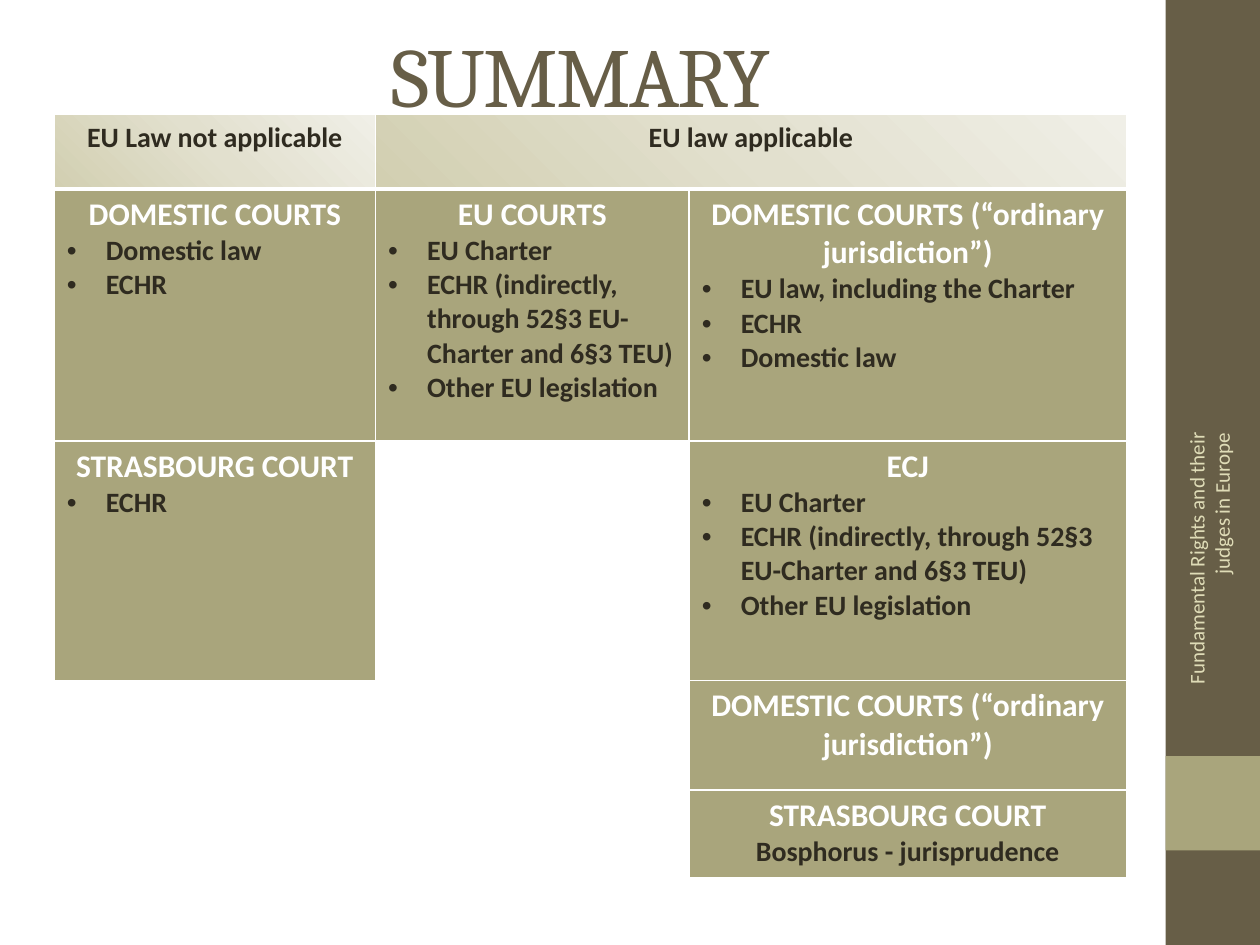
import pptx
import pptx.util
import pptx.oxml
import pptx.oxml.ns
import pptx.dml.color
import pptx.enum.shapes
import pptx.enum.text

Inches, Pt = pptx.util.Inches, pptx.util.Pt
ALIGN = pptx.enum.text.PP_ALIGN
MIDDLE = pptx.enum.text.MSO_ANCHOR.MIDDLE

# Content: each cell is (heading, centred notes, bullets)
TITLE = "SUMMARY"
SIDE = "Fundamental Rights and their judges in Europe"
HEADS = ["EU Law not applicable", "EU law applicable"]
EU_LAW = ["EU Charter",
          "ECHR (indirectly, through 52§3 EU-Charter and 6§3 TEU)",
          "Other EU legislation"]
ORDINARY = "DOMESTIC COURTS (“ordinary jurisdiction”)"
CELLS = {
    (1, 0): ("DOMESTIC COURTS", [], ["Domestic law", "ECHR"]),
    (1, 1): ("EU COURTS", [], EU_LAW),
    (1, 2): (ORDINARY, [],
             ["EU law, including the Charter", "ECHR", "Domestic law"]),
    (2, 0): ("STRASBOURG COURT", [], ["ECHR"]),
    (2, 2): ("ECJ", [], EU_LAW),
    (3, 2): (ORDINARY, [], []),
    (4, 2): ("STRASBOURG COURT", ["Bosphorus - jurisprudence"], []),
}
COLS = [2.55, 2.49, 3.47]
ROWS = [0.59, 2, 1.9, 0.87, 0.7]

THEME = {
    "brown": "675E47", "olive": "A9A57C", "ink": "2F2B20",
    "white": "FFFFFF", "side": "DFDCB7",
    "fade": [(0, "D2CFB1"), (50, "E2E0CE"), (100, "F0EFE7")],
    "body": "Calibri", "head": "Cambria",
    "title": 48, "court": 18, "item": 16, "small": 12,
}


def color(name):
    return pptx.dml.color.RGBColor.from_string(THEME[name])


def xml(text):
    # The namespace goes ahead of the first attribute
    space = pptx.oxml.ns.nsdecls("a")
    return pptx.oxml.parse_xml(text.replace(" ", f" {space} ", 1))


def style(para, size, tint, face="body", bold=False, align=ALIGN.CENTER):
    para.alignment = align
    font = para.font
    font.name, font.size, font.bold = THEME[face], Pt(THEME[size]), bold
    font.color.rgb = color(tint)


def band(slide, top, height, tint):
    shape = slide.shapes.add_shape(
        pptx.enum.shapes.MSO_SHAPE.RECTANGLE,
        Inches(9.25), Inches(top), Inches(0.75), Inches(height))
    shape.shadow.inherit = False
    shape.fill.solid()
    shape.fill.fore_color.rgb = color(tint)
    shape.line.fill.background()


def label(slide, box, text, **look):
    shape = slide.shapes.add_textbox(*map(Inches, box))
    frame = shape.text_frame
    frame.word_wrap = True
    frame.vertical_anchor = MIDDLE
    para = frame.paragraphs[0]
    para.text = text
    style(para, **look)
    return shape


def border(cell, base=1, top=1):
    widths = {"lnL": 1, "lnR": 1, "lnT": top, "lnB": base}
    props = cell._tc.get_or_add_tcPr()
    for place, (side, width) in enumerate(widths.items()):
        props.insert(place, xml(
            f'<a:{side} w="{int(Pt(width))}"><a:solidFill>'
            f'<a:srgbClr val="{THEME["white"]}"/></a:solidFill></a:{side}>'))


def fade(cell):
    stops = "".join(f'<a:gs pos="{at * 1000}"><a:srgbClr val="{tint}"/></a:gs>'
                    for at, tint in THEME["fade"])
    cell._tc.get_or_add_tcPr().append(xml(
        f'<a:gradFill rotWithShape="1"><a:gsLst>{stops}</a:gsLst>'
        f'<a:lin ang="{315 * 60000}" scaled="0"/></a:gradFill>'))


def bullet(para):
    props = para._p.get_or_add_pPr()
    dent = int(Inches(0.31))
    props.set("marL", str(dent))
    props.set("indent", str(-dent))
    props.append(xml('<a:buFont typeface="Arial"/>'))
    props.append(xml('<a:buChar char="•"/>'))


def court(cell, head, notes, items):
    cell.fill.solid()
    cell.fill.fore_color.rgb = color("olive")
    frame = cell.text_frame
    frame.text = "\n".join([head, *notes, *items])
    first, *rest = frame.paragraphs
    style(first, "court", "white", bold=True)
    for place, para in enumerate(rest):
        listed = place >= len(notes)
        if listed:
            bullet(para)
        style(para, "item", "ink", bold=True,
              align=ALIGN.LEFT if listed else ALIGN.CENTER)


def grid(slide):
    table = slide.shapes.add_table(
        len(ROWS), len(COLS), Inches(0.43), Inches(0.91),
        Inches(sum(COLS)), Inches(sum(ROWS))).table
    table.first_row = table.horz_banding = False
    for col, width in zip(table.columns, COLS):
        col.width = Inches(width)
    for row, height in zip(table.rows, ROWS):
        row.height = Inches(height)

    # Header row
    table.cell(0, 1).merge(table.cell(0, 2))
    for col, head in enumerate(HEADS):
        cell = table.cell(0, col)
        cell.text = head
        style(cell.text_frame.paragraphs[0], "item", "ink", bold=True)
        fade(cell)
        border(cell, base=3)

    # Courts and blank cells
    for row in range(1, len(ROWS)):
        for col in range(len(COLS)):
            cell = table.cell(row, col)
            if (row, col) in CELLS:
                court(cell, *CELLS[row, col])
                border(cell, top=3 if row == 1 else 1)
            else:
                cell.fill.background()


def main():
    deck = pptx.Presentation()
    deck.slide_width, deck.slide_height = Inches(10), Inches(7.5)
    slide = deck.slides.add_slide(deck.slide_layouts[6])

    # Side bar
    band(slide, 0, 7.5, "brown")
    band(slide, 6, 0.75, "olive")
    side = label(slide, (8.3, 4.43, 2.59, 0.4), SIDE,
                 size="small", tint="side", align=ALIGN.RIGHT)
    side.rotation = 270

    # Table and title
    grid(slide)
    title = label(slide, (0.83, 0.13, 7.56, 0.91), TITLE,
                  size="title", tint="brown", face="head")
    run = title.text_frame.paragraphs[0].runs[0]
    run._r.get_or_add_rPr().set("spc", "-100")

    deck.save("out.pptx")


if __name__ == "__main__":
    main()
